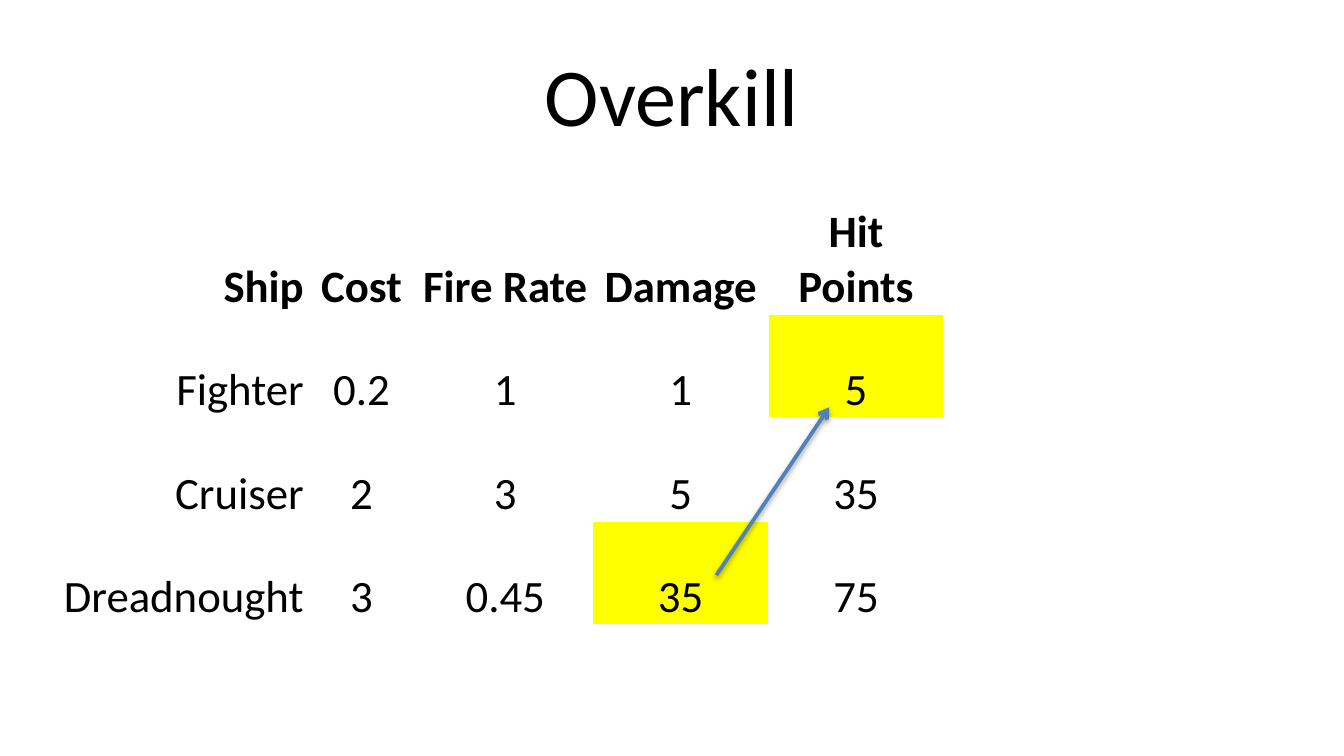
from dataclasses import dataclass

from lxml import etree
from pptx import Presentation
from pptx.dml.color import RGBColor
from pptx.enum.shapes import MSO_CONNECTOR
from pptx.enum.text import MSO_ANCHOR, PP_ALIGN
from pptx.oxml.ns import qn
from pptx.slide import Slide
from pptx.table import _Cell
from pptx.text.text import TextFrame
from pptx.util import Inches, Pt

CENTER, RIGHT = PP_ALIGN.CENTER, PP_ALIGN.RIGHT
MIDDLE, BOTTOM = MSO_ANCHOR.MIDDLE, MSO_ANCHOR.BOTTOM
STRAIGHT = MSO_CONNECTOR.STRAIGHT


@dataclass(frozen=True)
class Theme:
    font: str = "Calibri"
    text: str = "000000"
    highlight: str = "FFFF00"
    arrow: str = "4F81BD"
    shadow: str = "000000"
    title_size: float = 44
    table_size: float = 24
    arrow_width: float = 2


@dataclass(frozen=True)
class Ship:
    name: str
    cost: str
    fire_rate: str
    damage: str
    hit_points: str
    highlighted: str = ""

    def cells(self) -> list[tuple[str, bool]]:
        """Return each value with whether it is highlighted."""
        fields = ("name", "cost", "fire_rate", "damage", "hit_points")
        return [(getattr(self, field), field == self.highlighted) for field in fields]


THEME = Theme()
SLIDE_WIDTH = 10
SLIDE_HEIGHT = SLIDE_WIDTH * 9 / 16
HEADER = Ship("Ship", "Cost", "Fire Rate", "Damage", "Hit Points")
SHIPS = [
    Ship("Fighter", "0.2", "1", "1", "5", highlighted="hit_points"),
    Ship("Cruiser", "2", "3", "5", "35"),
    Ship("Dreadnought", "3", "0.45", "35", "75", highlighted="damage"),
]
COLUMN_WIDTHS = [1.92, 0.84, 1.3, 1.31, 1.3]
ROW_HEIGHTS = [0.86] + [0.77] * len(SHIPS)


def write_text(frame: TextFrame, text: str, *, size: float,
               bold: bool = False, align: PP_ALIGN = CENTER) -> None:
    paragraph = frame.paragraphs[0]
    paragraph.alignment = align
    run = paragraph.add_run()
    run.text = text
    run.font.name = THEME.font
    run.font.size = Pt(size)
    run.font.bold = bold
    run.font.color.rgb = RGBColor.from_string(THEME.text)


def add_title(slide: Slide, text: str) -> None:
    shape = slide.shapes.add_textbox(Inches(0.5), Inches(0.23), Inches(9), Inches(0.94))
    shape.text_frame.word_wrap = True
    shape.text_frame.vertical_anchor = MIDDLE
    write_text(shape.text_frame, text, size=THEME.title_size)


def format_cell(cell: _Cell, highlighted: bool) -> None:
    cell.vertical_anchor = BOTTOM
    cell.margin_left = cell.margin_right = cell.margin_top = Inches(0.01)
    cell.margin_bottom = 0
    if highlighted:
        cell.fill.solid()
        cell.fill.fore_color.rgb = RGBColor.from_string(THEME.highlight)
    else:
        cell.fill.background()


def add_ship_table(slide: Slide) -> None:
    table = slide.shapes.add_table(
        len(ROW_HEIGHTS), len(COLUMN_WIDTHS), Inches(0.35), Inches(1.48),
        Inches(sum(COLUMN_WIDTHS)), Inches(sum(ROW_HEIGHTS))).table
    table.first_row = table.horz_banding = False
    for column, width in zip(table.columns, COLUMN_WIDTHS):
        column.width = Inches(width)
    for row, height in zip(table.rows, ROW_HEIGHTS):
        row.height = Inches(height)

    for row_index, ship in enumerate([HEADER, *SHIPS]):
        for column_index, (text, highlighted) in enumerate(ship.cells()):
            cell = table.cell(row_index, column_index)
            format_cell(cell, highlighted)
            write_text(cell.text_frame, text, size=THEME.table_size,
                       bold=ship is HEADER,
                       align=RIGHT if column_index == 0 else CENTER)


def add_arrow(slide: Slide, start: tuple[float, float], end: tuple[float, float]) -> None:
    connector = slide.shapes.add_connector(STRAIGHT, *map(Inches, start + end))
    connector.line.color.rgb = RGBColor.from_string(THEME.arrow)
    connector.line.width = Pt(THEME.arrow_width)

    # Arrowhead and soft shadow
    properties = connector._element.spPr
    etree.SubElement(properties.find(qn("a:ln")), qn("a:tailEnd"), type="arrow")
    effects = etree.SubElement(properties, qn("a:effectLst"))
    shadow = etree.SubElement(
        effects, qn("a:outerShdw"), blurRad=str(Pt(3.1)), dist=str(Pt(1.6)),
        dir=str(90 * 60000), rotWithShape="0")
    color = etree.SubElement(shadow, qn("a:srgbClr"), val=THEME.shadow)
    etree.SubElement(color, qn("a:alpha"), val="38000")


def main() -> None:
    presentation = Presentation()
    presentation.slide_width = Inches(SLIDE_WIDTH)
    presentation.slide_height = Inches(SLIDE_HEIGHT)
    slide = presentation.slides.add_slide(presentation.slide_layouts[6])

    add_title(slide, "Overkill")
    add_ship_table(slide)
    # Dreadnought damage against fighter hit points
    add_arrow(slide, (5.33, 4.28), (6.17, 3.03))

    presentation.save("out.pptx")


if __name__ == "__main__":
    main()
